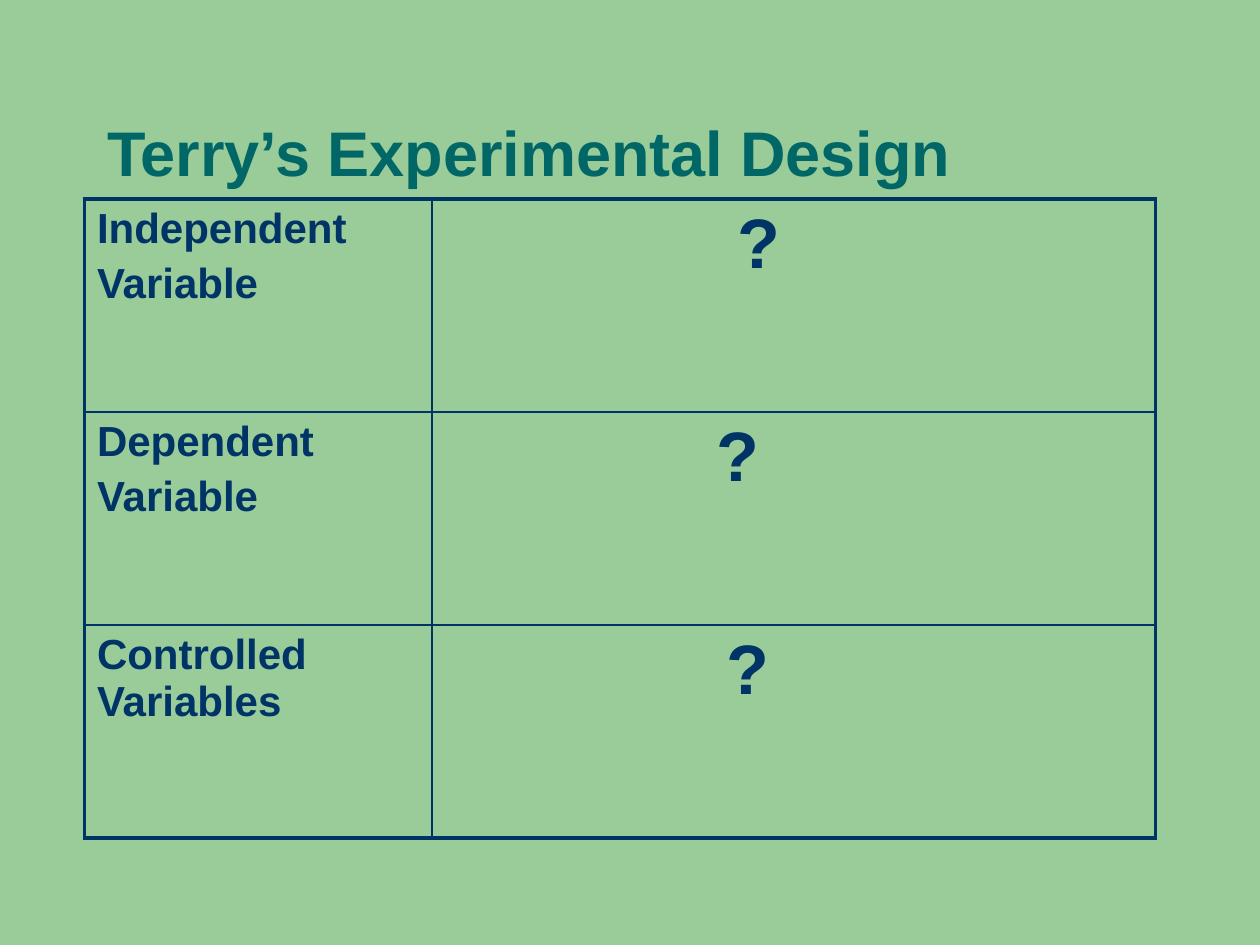
from lxml.etree import SubElement
from pptx import Presentation
from pptx.dml.color import RGBColor
from pptx.enum.text import MSO_ANCHOR, PP_ALIGN
from pptx.oxml.ns import qn
from pptx.util import Inches, Pt

TITLE = "Terry’s Experimental Design"
ROWS = [
    (["Independent", "Variable"], "?", 2.42),
    (["Dependent", "Variable"], "?", 2.26),
    (["Controlled Variables"], "?", 2.34),
]
THEME = {
    "font": "Arial",
    "ground": "99CC99",
    "head": {"color": "006666", "size": 36},
    "label": {"color": "003366", "size": 24},
    "mark": {"color": "003366", "size": 40},
    "line": "003366",
    "outer": 2.25,
    "inner": 1,
}
COLS = [2.76, 5.74]
HEIGHT = 1.69


def style(par, look):
    values = {"name": THEME["font"], "size": Pt(look["size"]), "bold": True}
    for run in par.runs:
        for key, value in values.items():
            setattr(run.font, key, value)
        run.font.color.rgb = RGBColor.from_string(look["color"])


def border(cell, row, col):
    edges = {
        "a:lnL": col == 0,
        "a:lnR": col == len(COLS) - 1,
        "a:lnT": row == 0,
        "a:lnB": row == len(ROWS) - 1,
    }
    props = cell._tc.get_or_add_tcPr()
    for place, (tag, outer) in enumerate(edges.items()):
        width = Pt(THEME["outer" if outer else "inner"])
        line = SubElement(props, qn(tag), w=str(width))
        fill = SubElement(line, qn("a:solidFill"))
        SubElement(fill, qn("a:srgbClr"), val=THEME["line"])
        props.insert(place, line)


def write(cell, lines, look, left):
    cell.fill.background()
    cell.margin_left = Inches(left)
    frame = cell.text_frame
    frame.text = "\n".join(lines)
    for par in frame.paragraphs:
        par.space_before = Pt(look["size"] * 0.2)
        style(par, look)


def main():
    deck = Presentation()
    deck.slide_width, deck.slide_height = Inches(10), Inches(7.5)
    slide = deck.slides.add_slide(deck.slide_layouts[5])
    ground = slide.background.fill
    ground.solid()
    ground.fore_color.rgb = RGBColor.from_string(THEME["ground"])

    title = slide.shapes.title
    box = {"left": 0.75, "top": 0.33, "width": 8.5, "height": 1.75}
    for key, value in box.items():
        setattr(title, key, Inches(value))
    frame = title.text_frame
    frame.text = TITLE
    frame.vertical_anchor = MSO_ANCHOR.BOTTOM
    frame.margin_bottom = Inches(0.57)
    par = frame.paragraphs[0]
    par.alignment = PP_ALIGN.LEFT
    par.line_spacing = 0.9
    style(par, THEME["head"])

    table = slide.shapes.add_table(
        len(ROWS), len(COLS), Inches(0.67), Inches(1.58),
        Inches(sum(COLS)), Inches(HEIGHT * len(ROWS))).table
    table.first_row = table.horz_banding = False
    for col, width in zip(table.columns, COLS):
        col.width = Inches(width)
    for row, (label, mark, left) in enumerate(ROWS):
        table.rows[row].height = Inches(HEIGHT)
        write(table.cell(row, 0), label, THEME["label"], 0.1)
        write(table.cell(row, 1), [mark], THEME["mark"], left)
        for col in range(len(COLS)):
            border(table.cell(row, col), row, col)

    deck.save("out.pptx")


if __name__ == "__main__":
    main()
